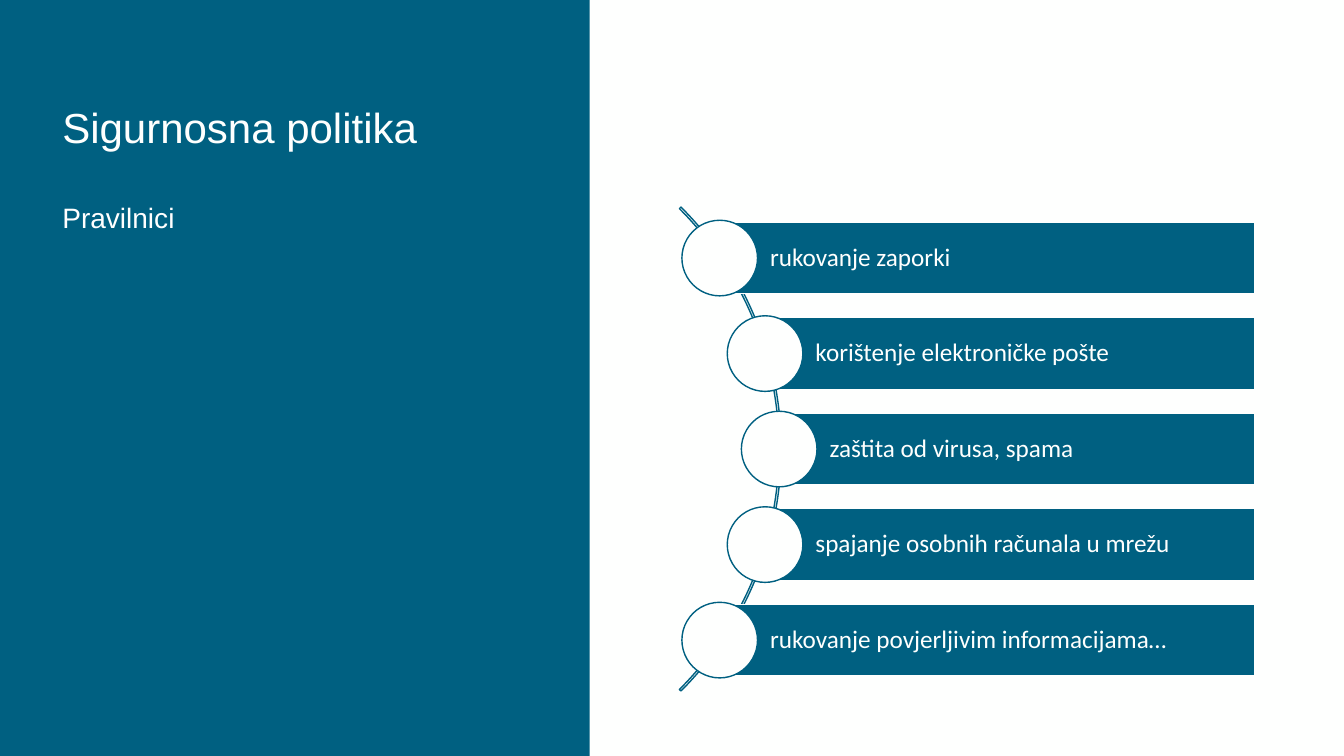
from pptx import Presentation
from pptx import util as u
from pptx.dml.color import RGBColor
from pptx.enum import shapes, text

TEAL = RGBColor(0x00, 0x60, 0x81)
PAPER = RGBColor(0xFE, 0xFF, 0xFE)
WHITE = RGBColor(0xFF, 0xFF, 0xFF)

# Square grid: 160 columns by 90 rows
COLUMNS, ROWS = 160, 90
CELL = u.Inches(1) / 12

RULES = [
    "rukovanje zaporki",
    "korištenje elektroničke pošte",
    "zaštita od virusa, spama",
    "spajanje osobnih računala u mrežu",
    "rukovanje povjerljivim informacijama…",
]


def cells(*counts):
    return [u.Emu(round(count * CELL)) for count in counts]


class PolicySlide:
    heading_font = "Arial"
    rule_font = "Calibri"

    def __init__(self, deck):
        self.slide = deck.slides.add_slide(deck.slide_layouts[6])
        background = self.slide.background.fill
        background.solid()
        background.fore_color.rgb = PAPER

    def shape(self, kind, area, fill, line=None):
        item = self.slide.shapes.add_shape(kind, *cells(*area))
        item.shadow.inherit = False
        item.fill.solid()
        item.fill.fore_color.rgb = fill
        if line is None:
            item.line.fill.background()
        else:
            item.line.color.rgb = line
            item.line.width = u.Pt(1)
        return item

    def disc(self, x, y, diameter, kind=shapes.MSO_SHAPE.OVAL):
        area = (x - diameter / 2, y - diameter / 2, diameter, diameter)
        return self.shape(kind, area, PAPER, TEAL)

    def label(self, item, words, frame_format, font_format, color, spacing=None):
        frame = item.text_frame
        for name, value in frame_format.items():
            setattr(frame, name, value)
        paragraph = frame.paragraphs[0]
        paragraph.alignment = text.PP_ALIGN.LEFT
        paragraph.line_spacing = spacing
        run = paragraph.add_run()
        run.text = words
        for name, value in font_format.items():
            setattr(run.font, name, value)
        run.font.color.rgb = color

    def heading(self, words, area, size, anchor, color, spacing=None):
        box = self.slide.shapes.add_textbox(*cells(*area))
        self.label(box, words, {"word_wrap": True, "vertical_anchor": anchor},
                   {"name": self.heading_font, "size": u.Pt(size)}, color, spacing)

    def rule_bar(self, words, area):
        bar = self.shape(shapes.MSO_SHAPE.RECTANGLE, area, TEAL, PAPER)
        indent, margin = cells(6, 0.5)
        frame_format = {
            "word_wrap": True, "vertical_anchor": text.MSO_ANCHOR.MIDDLE,
            "margin_left": indent, "margin_right": margin,
            "margin_top": margin, "margin_bottom": margin,
        }
        self.label(bar, words, frame_format,
                   {"name": self.rule_font, "size": u.Pt(18)}, PAPER, 0.9)


def main():
    deck = Presentation()
    deck.slide_width, deck.slide_height = cells(COLUMNS, ROWS)
    policy = PolicySlide(deck)

    # Left panel with title and subtitle
    policy.shape(shapes.MSO_SHAPE.RECTANGLE, (0, 0, 70.2, ROWS), TEAL)
    policy.heading("Sigurnosna politika", (6.24, 6.24, 57.36, 12.48), 30,
                   text.MSO_ANCHOR.BOTTOM, PAPER, 0.9)
    policy.heading("Pravilnici", (6.24, 23.28, 57.36, 60.6), 20,
                   text.MSO_ANCHOR.TOP, WHITE)

    # Arc from 315 to 45 degrees behind the rules
    middle = 53.46
    arc = policy.disc(52.26, middle, 81.48, shapes.MSO_SHAPE.BLOCK_ARC)
    for index, value in enumerate((189, 27, 0.0032)):
        arc.adjustments[index] = value

    # Rules, set back from the arc's outermost point by distance from the middle
    setbacks = (0, 1.68, 7.08)
    outermost, right, pitch, bar_height = 92.76, 149.4, 11.37, 8.52
    for index, rule in enumerate(RULES):
        step = index - len(RULES) // 2
        left = outermost - setbacks[abs(step)]
        center = middle + step * pitch
        policy.rule_bar(rule, (left, center - bar_height / 2, right - left, bar_height))
        policy.disc(left, center, 9)

    deck.save("out.pptx")


if __name__ == "__main__":
    main()
